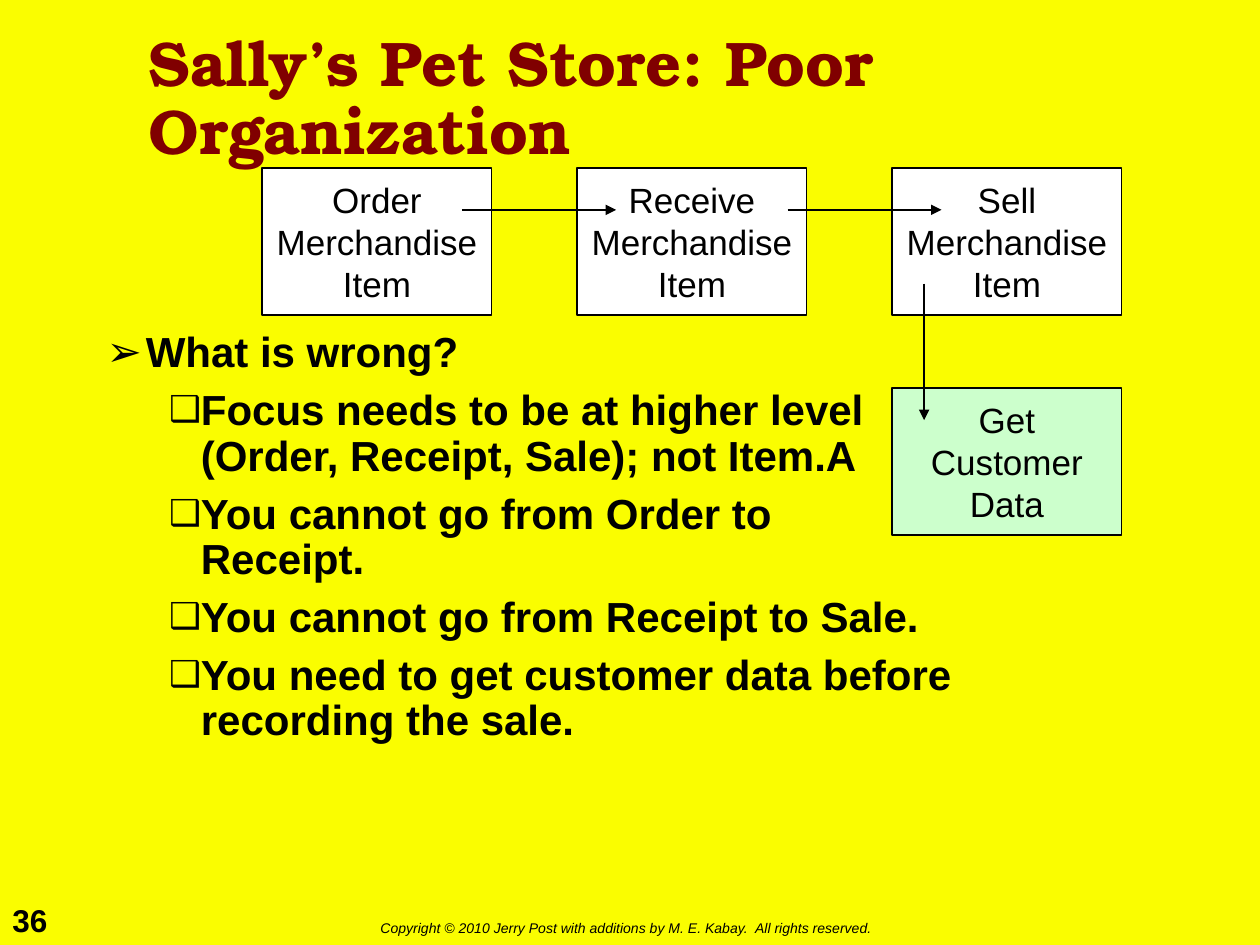
from lxml import etree
from pptx import Presentation
from pptx import util as u
from pptx.dml.color import RGBColor
from pptx.enum import shapes, text
from pptx.oxml.ns import qn

BLACK = "000000"


def paint(target, color):
    """Give a fill or a font one solid colour."""
    if hasattr(target, "solid"):
        target.solid()
        target.fore_color.rgb = RGBColor.from_string(color)
    else:
        target.color.rgb = RGBColor.from_string(color)


def write(frame, lines, size, font="Arial", color=BLACK, bold=False, italic=False,
          align=text.PP_ALIGN.LEFT, anchor=text.MSO_ANCHOR.TOP, wrap=False,
          spacing=None, before=0, bullets=None):
    """Fill a text frame; bullets holds (sign, size %, margin, hanging, level) per line."""
    frame.word_wrap = wrap
    frame.vertical_anchor = anchor
    for index, line in enumerate(lines):
        para = frame.add_paragraph() if index else frame.paragraphs[0]
        para.text = line
        para.alignment = align
        para.line_spacing = spacing
        para.space_before = u.Pt(before if index else 0)
        if bullets:
            sign, percent, margin, hanging, para.level = bullets[index]
            props = para._p.get_or_add_pPr()
            props.set("marL", str(u.Cm(margin)))
            props.set("indent", str(-u.Cm(hanging)))
            tint = etree.SubElement(props, qn("a:buClr"))
            etree.SubElement(tint, qn("a:srgbClr"), val=BLACK)
            etree.SubElement(props, qn("a:buSzPct"), val=str(percent * 1000))
            etree.SubElement(props, qn("a:buFont"), typeface="Arial")
            etree.SubElement(props, qn("a:buChar"), char=sign)
        for span in para.runs:
            span.font.name = font
            span.font.size = u.Pt(size)
            span.font.bold = bold
            span.font.italic = italic
            paint(span.font, color)


deck = Presentation()
deck.slide_width, deck.slide_height = u.Cm(25.4), u.Cm(19.05)
page = deck.slides.add_slide(deck.slide_layouts[6])
paint(page.background.fill, "FAFD00")

# Footer, title and body
number = page.shapes.add_textbox(u.Cm(0), u.Cm(18.03), u.Cm(1.3), u.Cm(1.02))
write(number.text_frame, ["36"], 18, bold=True)

footer = page.shapes.add_textbox(u.Cm(7.42), u.Cm(18.42), u.Cm(10.72), u.Cm(0.61))
write(footer.text_frame,
      ["Copyright © 2010 Jerry Post with additions by M. E. Kabay.  All rights reserved."],
      8, italic=True)

title = page.shapes.add_textbox(u.Cm(2.75), u.Cm(0.43), u.Cm(19.9), u.Cm(3.18))
write(title.text_frame, ["Sally’s Pet Store: Poor Organization"], 36,
      font="TeX Gyre Bonum", color="800000", bold=True, wrap=True,
      anchor=text.MSO_ANCHOR.MIDDLE, spacing=0.9)

body = page.shapes.add_textbox(u.Cm(1.9), u.Cm(6.56), u.Cm(19.9), u.Cm(10.8))
problems = [
    "Focus needs to be at higher level \v(Order, Receipt, Sale); not Item.A",
    "You cannot go from Order to \vReceipt.",
    "You cannot go from Receipt to Sale.",
    "You need to get customer data before recording the sale.",
]
write(body.text_frame, ["What is wrong?"] + problems, 24, bold=True, wrap=True,
      spacing=0.9, before=7.2,
      bullets=[("➢", 100, 0.79, 0.79, 0)] + [("❑", 85, 1.9, 0.64, 1)] * len(problems))

# Process steps
LEFT, TOP, PITCH = 5.29, 3.39, 6.35
steps = [
    (0, TOP, "FFFFFF", ["Order", "Merchandise", "Item"]),
    (1, TOP, "FFFFFF", ["Receive", "Merchandise", "Item"]),
    (2, TOP, "FFFFFF", ["Sell", "Merchandise", "Item"]),
    (2, 7.83, "CCFFCC", ["Get", "Customer", "Data"]),
]
for column, top, color, words in steps:
    box = page.shapes.add_shape(shapes.MSO_SHAPE.RECTANGLE, u.Cm(LEFT + column * PITCH),
                                u.Cm(top), u.Cm(4.62), u.Cm(2.96))
    box.shadow.inherit = False
    paint(box.fill, color)
    paint(box.line.fill, BLACK)
    box.line.width = u.Pt(1)
    write(box.text_frame, words, 20, align=text.PP_ALIGN.CENTER,
          anchor=text.MSO_ANCHOR.MIDDLE)

# Arrows between the steps
arrows = [(9.31, 4.23, 12.42, 4.23), (15.88, 4.23, 18.98, 4.23), (18.63, 5.72, 18.63, 8.47)]
for ends in arrows:
    arrow = page.shapes.add_connector(shapes.MSO_CONNECTOR.STRAIGHT, *map(u.Cm, ends))
    paint(arrow.line.fill, BLACK)
    arrow.line.width = u.Pt(1)
    etree.SubElement(arrow.line._get_or_add_ln(), qn("a:tailEnd"), type="triangle")
    etree.SubElement(arrow._element.spPr, qn("a:effectLst"))

deck.save("out.pptx")
